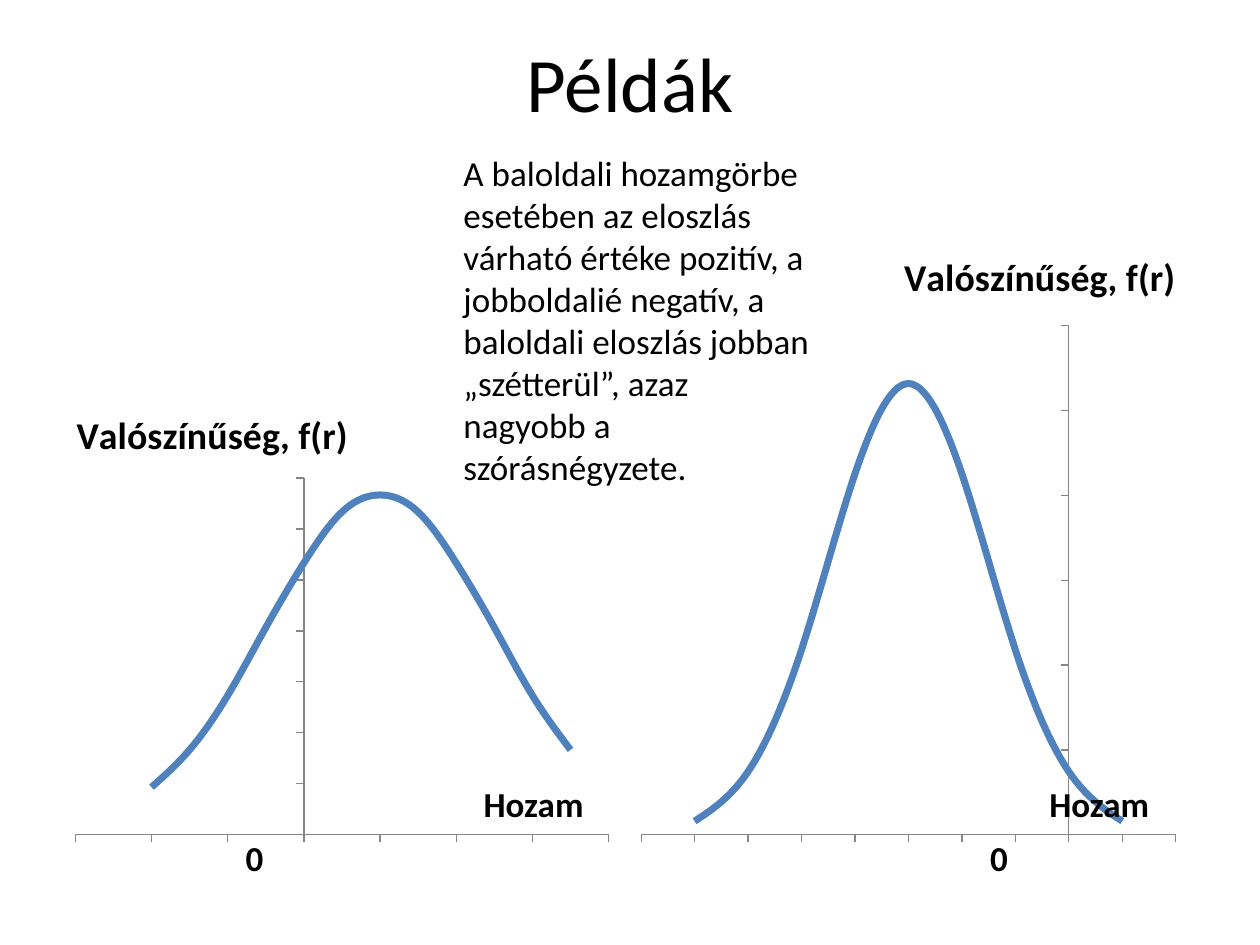
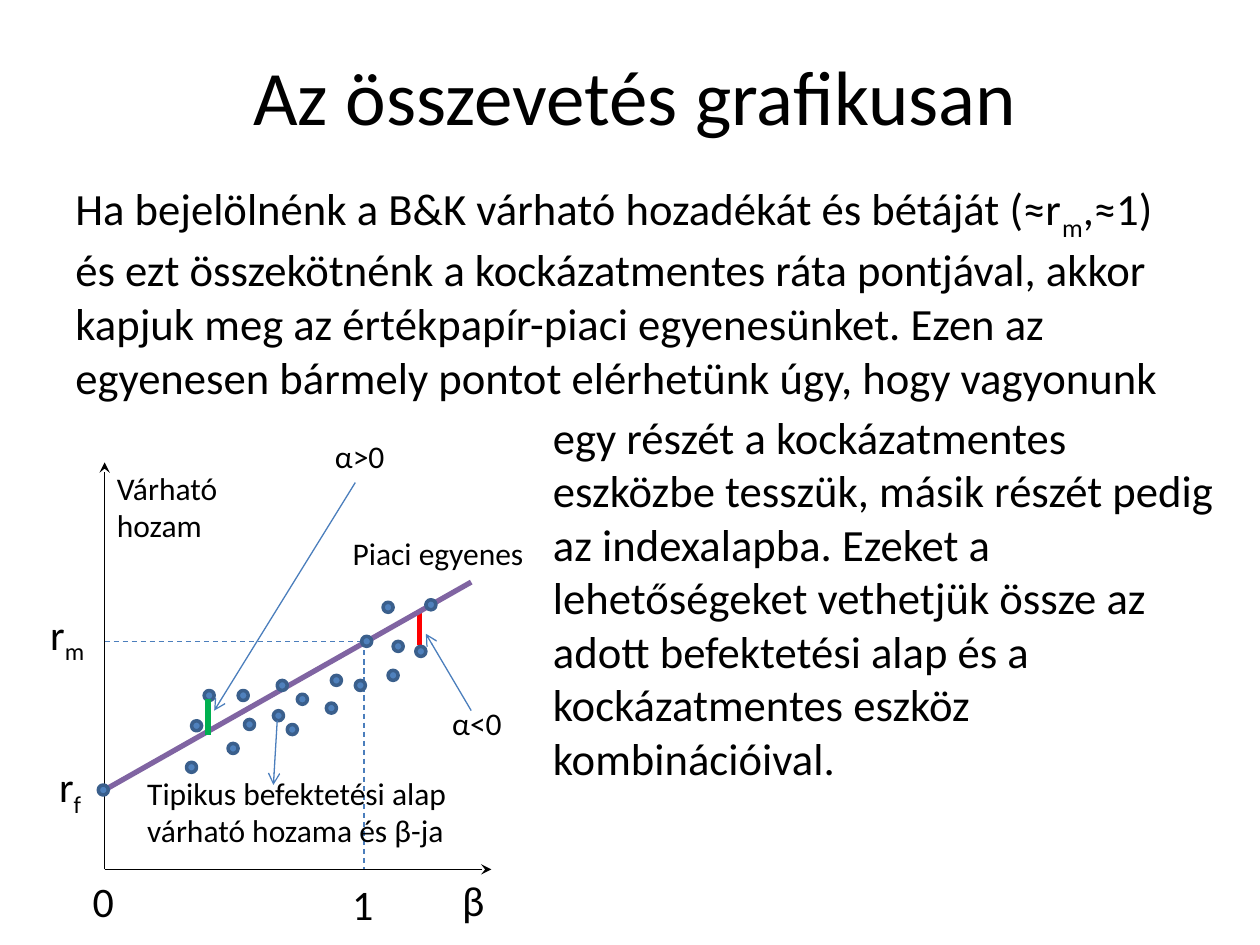
from lxml import etree
from pptx import Presentation
from pptx.chart.data import XyChartData
from pptx.dml.color import RGBColor
from pptx.enum.chart import XL_CHART_TYPE, XL_TICK_LABEL_POSITION, XL_TICK_MARK
from pptx.enum.dml import MSO_LINE
from pptx.enum.shapes import MSO_CONNECTOR, MSO_SHAPE
from pptx.enum.text import MSO_ANCHOR, PP_ALIGN
from pptx.oxml.ns import qn
from pptx.util import Inches, Pt

BLACK = RGBColor(0x00, 0x00, 0x00)
BLUE = RGBColor(0x4F, 0x81, 0xBD)
DARK_BLUE = RGBColor(0x3A, 0x5F, 0x8C)
LINE_BLUE = RGBColor(0x4B, 0x7E, 0xBC)
PURPLE = RGBColor(0x80, 0x64, 0xA2)
RED = RGBColor(0xFF, 0x00, 0x00)
GREEN = RGBColor(0x00, 0xB0, 0x50)
GREY = RGBColor(0x86, 0x86, 0x86)

LEFT, CENTER = PP_ALIGN.LEFT, PP_ALIGN.CENTER
TOP, MIDDLE = MSO_ANCHOR.TOP, MSO_ANCHOR.MIDDLE
STRAIGHT = MSO_CONNECTOR.STRAIGHT
OVAL = MSO_SHAPE.OVAL
DASH = MSO_LINE.DASH
SMOOTH_CURVE = XL_CHART_TYPE.XY_SCATTER_SMOOTH_NO_MARKERS
NO_LABELS = XL_TICK_LABEL_POSITION.NONE
TICK_OUT, TICK_NONE = XL_TICK_MARK.OUTSIDE, XL_TICK_MARK.NONE

FONT = "Calibri"
COLUMNS, ROWS = 100, 75
DOT = 0.8


def write(frame, text, size=18, bold=False, align=LEFT, before=0):
    """Fill a frame; every second part between | signs is a subscript."""
    paragraph = frame.paragraphs[0]
    paragraph.alignment = align
    paragraph.space_before = Pt(before)
    for index, part in enumerate(text.split("|")):
        if not part:
            continue
        run = paragraph.add_run()
        run.text = part
        run.font.name = FONT
        run.font.size = Pt(size)
        run.font.bold = bold
        run.font.color.rgb = BLACK
        if index % 2:
            run._r.get_or_add_rPr().set("baseline", "-25000")


def place(parent, after, inner=False, **shares):
    """Give a chart part a manual layout, in shares of the chart's size."""
    old = parent.find(qn("c:layout"))
    if old is not None:
        parent.remove(old)
    layout = etree.Element(qn("c:layout"))
    manual = etree.SubElement(layout, qn("c:manualLayout"))
    settings = {"layoutTarget": "inner"} if inner else {}
    settings.update(xMode="edge", yMode="edge", **shares)
    for name, value in settings.items():
        etree.SubElement(manual, qn(f"c:{name}")).set("val", str(value))
    if after is None:
        parent.insert(0, layout)
    else:
        after.addnext(layout)


class Deck:
    def __init__(self):
        self.presentation = Presentation()
        self.presentation.slide_width = Inches(10)
        self.presentation.slide_height = Inches(7.5)
        self.slide = None

    def col(self, count):
        return round(self.presentation.slide_width * count / COLUMNS)

    def row(self, count):
        return round(self.presentation.slide_height * count / ROWS)

    def box(self, left, top, width, height):
        return self.col(left), self.row(top), self.col(width), self.row(height)

    def new_slide(self):
        blank = self.presentation.slide_layouts[6]
        self.slide = self.presentation.slides.add_slide(blank)

    def text(self, at, text, anchor=TOP, **style):
        frame = self.slide.shapes.add_textbox(*self.box(*at)).text_frame
        frame.word_wrap = True
        frame.vertical_anchor = anchor
        write(frame, text, **style)

    def title(self, left, top, text):
        self.text((left, top, 90, 12.5), text, anchor=MIDDLE, size=44, align=CENTER)

    def body(self, at, text):
        self.text(at, text, size=25.5, before=1.5)

    def line(self, start, end, color, width=0.75, dash=None, head=None):
        line = self.slide.shapes.add_connector(
            STRAIGHT, self.col(start[0]), self.row(start[1]),
            self.col(end[0]), self.row(end[1]))
        line.line.color.rgb = color
        line.line.width = Pt(width)
        if dash:
            line.line.dash_style = dash
        properties = line.element.spPr
        if head:
            outline = properties.find(qn("a:ln"))
            etree.SubElement(outline, qn("a:tailEnd")).set("type", head)
        etree.SubElement(properties, qn("a:effectLst"))

    def dot(self, left, top):
        dot = self.slide.shapes.add_shape(OVAL, *self.box(left, top, DOT, DOT))
        dot.shadow.inherit = False
        dot.fill.solid()
        dot.fill.fore_color.rgb = BLUE
        dot.line.color.rgb = DARK_BLUE
        dot.line.width = Pt(2)

    def curve(self, at, first_return, densities, x_scale, y_scale, title_at, plot_at):
        """Draw a density curve; each scale is minimum, maximum and step."""
        data = XyChartData()
        series = data.add_series("Series 1")
        for x, density in enumerate(densities, first_return):
            series.add_data_point(x, density)
        chart = self.slide.shapes.add_chart(SMOOTH_CURVE, *self.box(*at), data).chart
        chart.font.name = FONT
        chart.font.size = Pt(18)
        chart.font.color.rgb = BLACK
        chart.has_legend = False
        write(chart.chart_title.text_frame, "Valószínűség, f(r)",
              size=21.6, bold=True, align=CENTER)
        chart.chart_title.include_in_layout = False

        for axis, scale in ((chart.category_axis, x_scale), (chart.value_axis, y_scale)):
            axis.minimum_scale, axis.maximum_scale, axis.major_unit = scale
            axis.has_major_gridlines = False
            axis.tick_label_position = NO_LABELS
            axis.major_tick_mark = TICK_OUT
            axis.minor_tick_mark = TICK_NONE
            axis.format.line.color.rgb = GREY
            axis.format.line.width = Pt(0.75)

        plot = chart.plots[0]
        plot.vary_by_categories = False
        stroke = plot.series[0].format.line
        stroke.color.rgb = BLUE
        stroke.width = Pt(4)
        for smooth in chart.element.iter(qn("c:smooth")):
            smooth.set("val", "1")

        heading = chart.chart_title.element
        place(heading, heading.find(qn("c:tx")), x=title_at[0], y=title_at[1])
        top, height = plot_at
        place(next(chart.element.iter(qn("c:plotArea"))), None, inner=True,
              x=0.02, y=top, w=0.96, h=height)


def add_examples(deck):
    deck.new_slide()
    deck.title(5, 0.2, "Példák")
    deck.curve((5.1, 30.4, 44.1, 36.6), -4,
               (14, 25, 41, 61, 80, 95, 100, 95, 80, 61, 41, 25),
               (-6, 8, 2), (0, 105, 15), (0.01, 0.04), (0.206, 0.774))
    deck.curve((50, 17.8, 44.2, 49.5), -7,
               (3, 14, 41, 80, 100, 80, 41, 14, 3),
               (-8, 2, 1), (0, 112.8, 18.8), (0.48, 0.03), (0.163, 0.816))
    for label_left, zero_left in ((37.4, 18.5), (82.3, 77.6)):
        deck.text((label_left, 61.6, 12.6, 4.4), "Hozam", size=20, bold=True)
        deck.text((zero_left, 65.9, 7.1, 4.4), "0", size=20, bold=True)
    deck.text((35.8, 11.5, 29.9, 27.9),
              "A baloldali hozamgörbe esetében az eloszlás várható értéke pozitív, "
              "a jobboldalié negatív, a baloldali eloszlás jobban „szétterül”, "
              "azaz nagyobb a szórásnégyzete.", size=20)


def add_comparison(deck):
    origin_x, axis_y, market_y = 8.3, 69, 50.9
    funds = (
        (15.2, 57.2), (7.8, 62.3), (28.7, 50.5), (30.4, 47.8), (33.8, 47.6),
        (22, 54), (18.9, 54.8), (19.4, 57.1), (16.2, 54.8), (25.9, 55.8),
        (14.8, 60.5), (18.1, 59), (26.3, 53.6), (23.6, 55.1), (30.8, 53.2),
        (33, 51.3), (22.8, 57.5), (31.2, 50.9), (28.2, 54), (21.7, 56.4),
    )
    deck.new_slide()
    deck.line((33.3, 48.4), (33.3, 51.2), RED, width=3)
    deck.title(5.4, 1.3, "Az összevetés grafikusan")
    deck.body((5, 13.9, 89.9, 21.3),
              "Ha bejelölnénk a B&K várható hozadékát és bétáját (≈r|m|,≈1) és ezt "
              "összekötnénk a kockázatmentes ráta pontjával, akkor kapjuk meg az "
              "értékpapír-piaci egyenesünket. Ezen az egyenesen bármely pontot "
              "elérhetünk úgy, hogy vagyonunk")
    deck.body((42.9, 32, 54.4, 39.5),
              "egy részét a kockázatmentes eszközbe tesszük, másik részét pedig az "
              "indexalapba. Ezeket a lehetőségeket vethetjük össze az adott "
              "befektetési alap és a kockázatmentes eszköz kombinációival.")

    deck.line((origin_x, axis_y), (origin_x, 36.7), BLACK, head="stealth")
    deck.line((origin_x, axis_y), (39, axis_y), BLACK, head="stealth")
    deck.line((origin_x, 62.7), (37.4, 46.2), PURPLE, width=3)
    deck.line((origin_x, market_y), (29.5, market_y), LINE_BLUE, dash=DASH)
    deck.line((28.9, market_y), (28.9, axis_y), LINE_BLUE, dash=DASH)

    for at, label, align in (
        ((35.7, 68.9, 5.5, 5), "β", LEFT),
        ((26.3, 69.2, 5, 5), "1", CENTER),
        ((5.7, 69, 5, 5), "0", CENTER),
        ((3, 47.8, 5.5, 5), "r|m", LEFT),
        ((3.7, 59.9, 5.5, 5), "r|f", LEFT),
    ):
        deck.text(at, label, size=24, align=align)

    for fund in funds:
        deck.dot(*fund)

    for at, note in (
        ((8.3, 36.7, 14.6, 7.1), "Várható hozam"),
        ((27, 41.9, 22.8, 4), "Piaci egyenes"),
        ((10.7, 60.9, 26.7, 7.1), "Tipikus befektetési alap várható hozama és β-ja"),
        ((25.6, 34.2, 7.1, 4), "α>0"),
        ((34.9, 55.4, 7.1, 4), "α<0"),
    ):
        deck.text(at, note)

    deck.line((16.5, 55.5), (16.5, 58.3), GREEN, width=3)
    for start, end in (
        ((22, 57.2), (21.7, 62.3)),
        ((28.2, 38.3), (17, 56.4)),
        ((37.4, 56.4), (33.8, 50.3)),
    ):
        deck.line(start, end, LINE_BLUE, head="arrow")


def main():
    deck = Deck()
    add_examples(deck)
    add_comparison(deck)
    deck.presentation.save("out.pptx")


if __name__ == "__main__":
    main()
